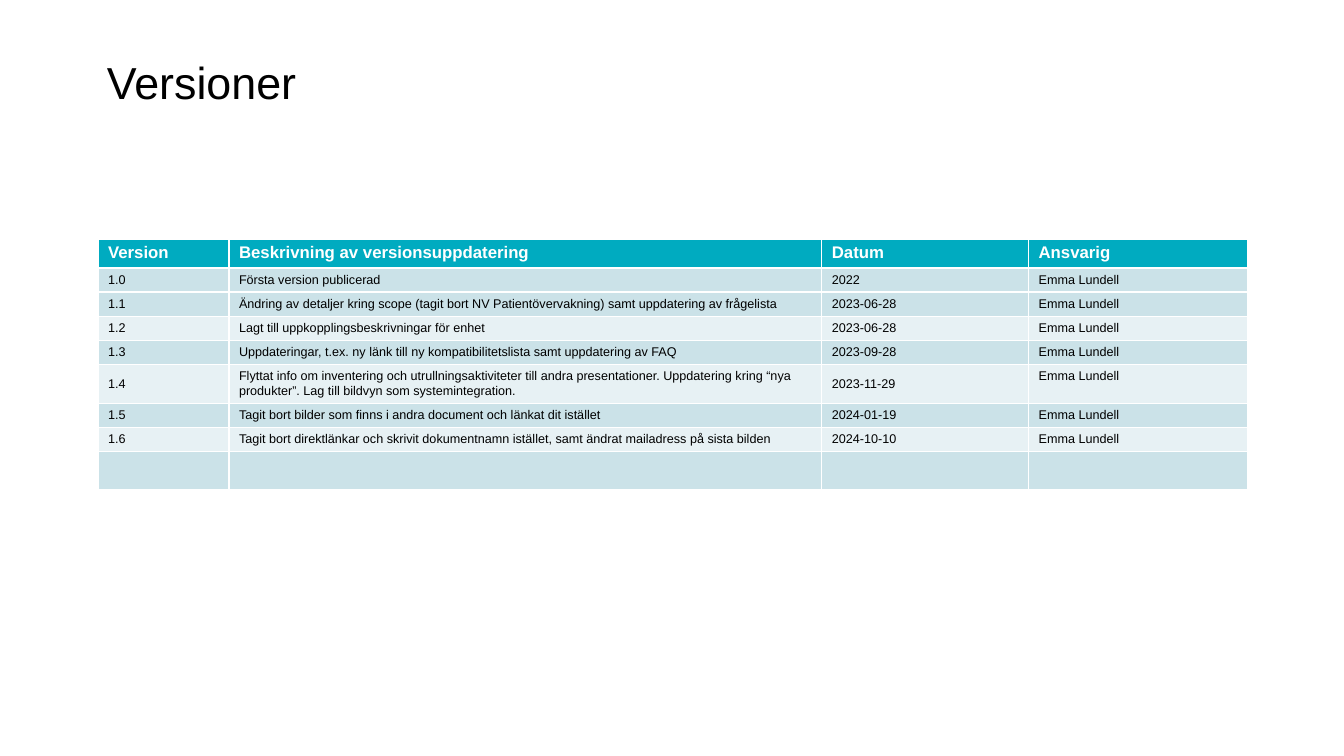
from pptx import Presentation, util as u
from pptx.dml.color import RGBColor
from pptx.enum import text
from pptx.oxml import parse_xml
from pptx.oxml.ns import nsdecls

HUES = {"head": "00ABC0", "dark": "CBE2E8", "light": "E7F1F4",
        "white": "FFFFFF", "black": "000000"}
OWNER = "Emma Lundell"
HEADS = ["Version", "Beskrivning av versionsuppdatering", "Datum", "Ansvarig"]
NOTES = [
    ("1.0", "Första version publicerad", "2022"),
    ("1.1", "Ändring av detaljer kring scope (tagit bort NV Patientövervakning) "
            "samt uppdatering av frågelista", "2023-06-28"),
    ("1.2", "Lagt till uppkopplingsbeskrivningar för enhet", "2023-06-28"),
    ("1.3", "Uppdateringar, t.ex. ny länk till ny kompatibilitetslista "
            "samt uppdatering av FAQ", "2023-09-28"),
    ("1.4", "Flyttat info om inventering och utrullningsaktiviteter till andra "
            "presentationer. Uppdatering kring “nya produkter”. "
            "Lag till bildvyn som systemintegration.", "2023-11-29"),
    ("1.5", "Tagit bort bilder som finns i andra document och länkat dit istället",
     "2024-01-19"),
    ("1.6", "Tagit bort direktlänkar och skrivit dokumentnamn istället, "
            "samt ändrat mailadress på sista bilden", "2024-10-10"),
]
ROWS = [HEADS] + [[*note, OWNER] for note in NOTES] + [[""] * len(HEADS)]
FILLS = ["head", "dark"] + ["dark", "light"] * 3 + ["dark"]
WIDTHS = [3.3, 14.94, 5.21, 5.51]
HIGHS = [0.73] + [0.61] * 4 + [0.97] + [0.61] * 2 + [0.97]


class Deck:
    font = "Arial"

    def __init__(self):
        self.prs = Presentation()
        self.prs.slide_width, self.prs.slide_height = u.Cm(33.87), u.Cm(19.05)
        self.slide = self.prs.slides.add_slide(self.prs.slide_layouts[5])

    def style(self, part, size, hue, bold=False):
        part.font.name = self.font
        part.font.size = u.Pt(size)
        part.font.bold = bold
        part.font.color.rgb = RGBColor.from_string(HUES[hue])

    def title(self, words, left, top, width, height):
        box = self.slide.shapes.title
        box.left, box.top, box.width, box.height = map(u.Cm, (left, top, width, height))
        frame = box.text_frame
        frame.text = words
        frame.auto_size = text.MSO_AUTO_SIZE.NONE
        frame.vertical_anchor = text.MSO_ANCHOR.TOP
        frame.margin_top = u.Cm(0.28)
        para = frame.paragraphs[0]
        para.alignment = text.PP_ALIGN.LEFT
        self.style(para.runs[0], 32, "black")

    def edge(self, cell):
        """Draw white lines on all four sides of a cell."""
        props = cell._tc.get_or_add_tcPr()
        for spot, side in enumerate("LRTB"):
            props.insert(spot, parse_xml(
                f'<a:ln{side} {nsdecls("a")} w="{u.Pt(1.11)}"><a:solidFill>'
                f'<a:srgbClr val="{HUES["white"]}"/></a:solidFill></a:ln{side}>'))

    def cell(self, cell, words, fill, head, anchor):
        cell.text = words
        cell.vertical_anchor = anchor
        cell.margin_top = cell.margin_bottom = u.Cm(0.12)
        cell.fill.solid()
        cell.fill.fore_color.rgb = RGBColor.from_string(HUES[fill])
        self.edge(cell)
        look = (12, "white", True) if head else (9, "black")
        para = cell.text_frame.paragraphs[0]
        for part in para.runs or [para]:
            self.style(part, *look)

    def table(self, left, top, rows, fills, widths, highs):
        grid = self.slide.shapes.add_table(
            len(rows), len(widths), u.Cm(left), u.Cm(top),
            u.Cm(sum(widths)), u.Cm(sum(highs))).table
        for col, width in zip(grid.columns, widths):
            col.width = u.Cm(width)
        for r, (row, fill, high) in enumerate(zip(rows, fills, highs)):
            grid.rows[r].height = u.Cm(high)
            for c, words in enumerate(row):
                mid = r > 0 and c in (0, 2)
                anchor = text.MSO_ANCHOR.MIDDLE if mid else text.MSO_ANCHOR.TOP
                self.cell(grid.cell(r, c), words, fill, r == 0, anchor)


def main():
    deck = Deck()
    deck.title("Versioner", 2.44, 1.09, 29, 1.2)
    deck.table(2.47, 6.02, ROWS, FILLS, WIDTHS, HIGHS)
    deck.prs.save("out.pptx")


if __name__ == "__main__":
    main()
